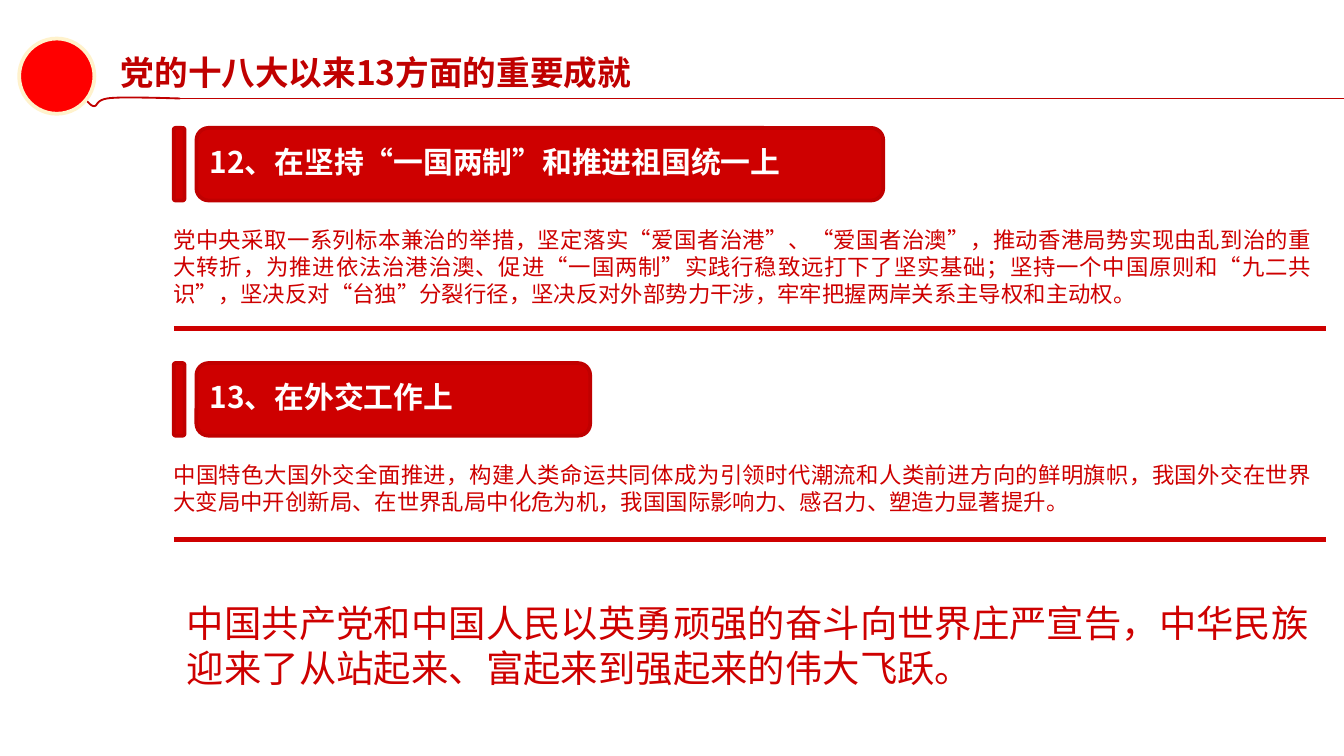
from pptx import Presentation
from pptx.dml.color import RGBColor
from pptx.enum.shapes import MSO_CONNECTOR as Connector, MSO_SHAPE as Shape
from pptx.enum.text import MSO_AUTO_SIZE as AutoSize, PP_ALIGN as Align
from pptx.oxml.ns import qn
from pptx.util import Inches, Pt
from lxml.etree import SubElement

FONT = "Noto Sans CJK SC"
RED, DARK_RED, BRIGHT_RED = "CE0000", "C00000", "FF0000"
WHITE, CREAM = "FFFFFF", "FFF2CC"
COLUMNS, ROWS = 100, 56.25
BODY_LEFT, RULE_RIGHT = 12.93, 98.7

# Start point, then cubic segments as two control points and an end point
WAVE_START = (3.6, 7.7)
WAVE_CURVES = [
    ((4.0, 7.6), (4.4, 7.1), (4.8, 7.2)),
    ((5.3, 7.2), (4.9, 7.7), (5.3, 7.8)),
    ((5.7, 7.9), (5.9, 7.4), (6.2, 7.4)),
    ((6.5, 7.4), (6.7, 7.9), (7.0, 7.9)),
    ((7.3, 7.9), (7.1, 7.4), (8.2, 7.3)),
    ((9.3, 7.2), (12.3, 7.3), (13.4, 7.33)),
]

# Top row, heading, banner width, heading width, body text, body height, rule row
SECTIONS = [
    (9.52, "12、在坚持“一国两制”和推进祖国统一上", 51.1, 49.3,
     "党中央采取一系列标本兼治的举措，坚定落实“爱国者治港”、“爱国者治澳”，"
     "推动香港局势实现由乱到治的重大转折，为推进依法治港治澳、促进“一国两制”"
     "实践行稳致远打下了坚实基础；坚持一个中国原则和“九二共识”，坚决反对“台独”"
     "分裂行径，坚决反对外部势力干涉，牢牢把握两岸关系主导权和主动权。", 7.1, 24.45),
    (27.02, "13、在外交工作上", 29.3, 29.3,
     "中国特色大国外交全面推进，构建人类命运共同体成为引领时代潮流和人类前进方向的"
     "鲜明旗帜，我国外交在世界大变局中开创新局、在世界乱局中化危为机，"
     "我国国际影响力、感召力、塑造力显著提升。", 5, 40.15),
]


def color(code):
    return RGBColor.from_string(code)


def curve_points(start, curves, steps=12):
    """Sample a chain of cubic curves into points after the start."""
    points = []
    for first, second, end in curves:
        for step in range(1, steps + 1):
            t = step / steps
            u = 1 - t
            points.append(tuple(
                u**3 * a + 3 * u * u * t * b + 3 * u * t * t * c + t**3 * d
                for a, b, c, d in zip(start, first, second, end)))
        start = end
    return points


class SlideBuilder:
    """Draws on one slide; lengths are grid columns and rows."""

    def __init__(self, deck):
        self.column = deck.slide_width / COLUMNS
        self.row = deck.slide_height / ROWS
        self.slide = deck.slides.add_slide(deck.slide_layouts[6])
        self.shapes = self.slide.shapes
        self.slide.background.fill.solid()
        self.slide.background.fill.fore_color.rgb = color(WHITE)

    def place(self, *lengths):
        """Turn alternating columns and rows into slide units."""
        return [round(length * (self.row if index % 2 else self.column))
                for index, length in enumerate(lengths)]

    def outline(self, item, line, weight):
        item.line.color.rgb = color(line)
        item.line.width = Pt(weight)

    def shape(self, kind, *area, fill=RED, line=DARK_RED):
        shape = self.shapes.add_shape(kind, *self.place(*area))
        shape.shadow.inherit = False
        shape.fill.solid()
        shape.fill.fore_color.rgb = color(fill)
        self.outline(shape, line, 2)

    def rule(self, left, right, row, line=RED, weight=2.5):
        rule = self.shapes.add_connector(
            Connector.STRAIGHT, *self.place(left, row, right, row))
        self.outline(rule, line, weight)
        SubElement(rule._element.spPr, qn("a:effectLst"))

    def curve(self, start, curves):
        builder = self.shapes.build_freeform(*self.place(*start))
        builder.add_line_segments(
            [self.place(*point) for point in curve_points(start, curves)],
            close=False)
        curve = builder.convert_to_shape()
        curve.shadow.inherit = False
        curve.fill.background()
        self.outline(curve, DARK_RED, 1)

    def text(self, words, *area, size=12, ink=RED, bold=False,
             align=Align.LEFT, inset=(0.1, 0.1)):
        box = self.shapes.add_textbox(*self.place(*area))
        frame = box.text_frame
        frame.word_wrap = True
        frame.auto_size = AutoSize.SHAPE_TO_FIT_TEXT
        frame.margin_left, frame.margin_right = map(Inches, inset)
        para = frame.paragraphs[0]
        para.alignment = align
        span = para.add_run()
        span.text = words
        span.font.size = Pt(size)
        span.font.bold = bold
        span.font.color.rgb = color(ink)
        span.font.name = FONT
        SubElement(span._r.rPr, qn("a:ea"), typeface=FONT)

    def section(self, top, heading, banner_width, heading_width,
                body, body_height, rule_row):
        for left, width in ((BODY_LEFT, 0.8), (14.62, banner_width)):
            self.shape(Shape.ROUNDED_RECTANGLE, left, top, width, 5.4)
        self.text(heading, 14.62, top + 0.68, heading_width, 3.7,
                  size=16, ink=WHITE, bold=True)
        self.text(body, 11.92, top + 6.8, 86.75, body_height,
                  align=Align.JUSTIFY)
        self.rule(BODY_LEFT, RULE_RIGHT, rule_row)


def main():
    deck = Presentation()
    deck.slide_width = Inches(10)
    deck.slide_height = round(deck.slide_width * 9 / 16)
    builder = SlideBuilder(deck)

    builder.curve(WAVE_START, WAVE_CURVES)
    builder.rule(13.4, COLUMNS, 7.33, line=DARK_RED, weight=1)
    builder.shape(Shape.OVAL, 1.43, 2.87, 5.6, 5.6, fill=BRIGHT_RED, line=CREAM)
    builder.text("党的十八大以来13方面的重要成就", 7.8, 3.35, 58, 3.7,
                 size=18, ink=DARK_RED, bold=True, inset=(0.12, 0.07))

    for section in SECTIONS:
        builder.section(*section)

    builder.text("中国共产党和中国人民以英勇顽强的奋斗向世界庄严宣告，"
                 "中华民族迎来了从站起来、富起来到强起来的伟大飞跃。",
                 BODY_LEFT, 44.2, 85.7, 7.7, size=20)
    deck.save("out.pptx")


if __name__ == "__main__":
    main()
